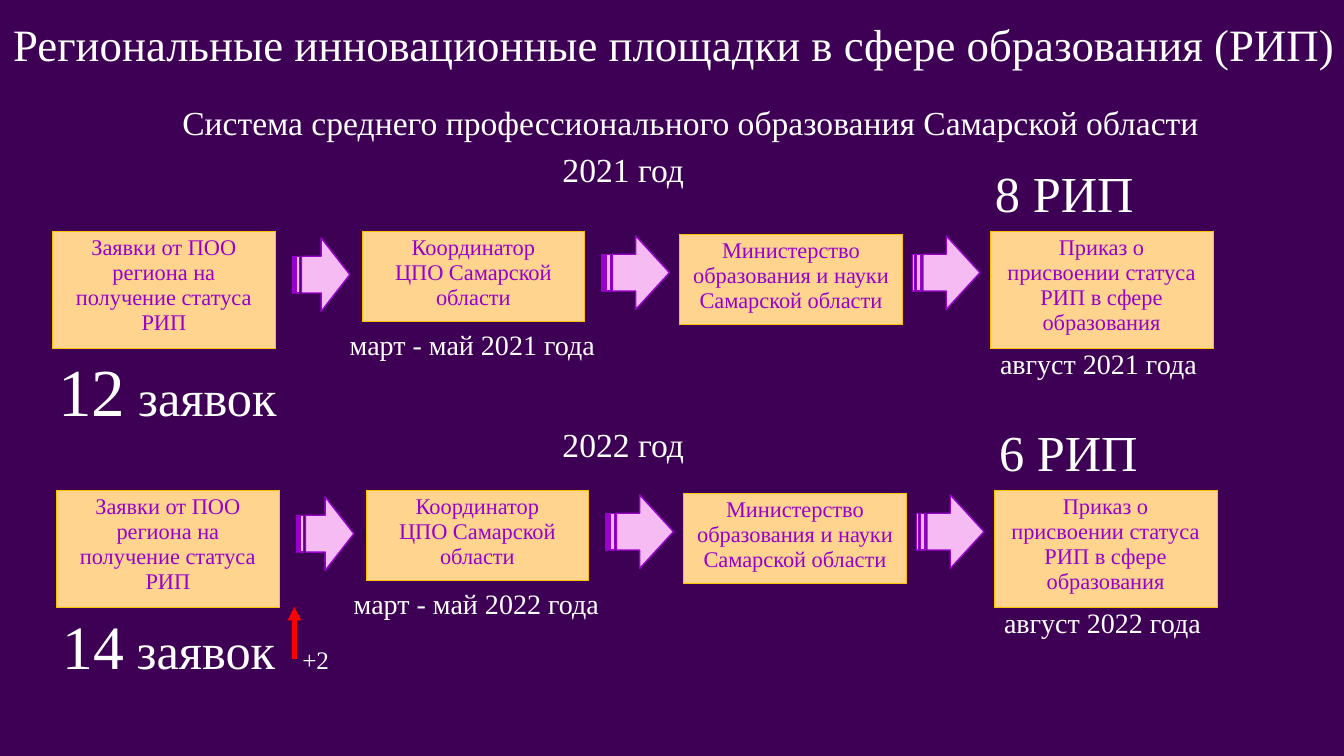
from dataclasses import dataclass

from lxml import etree
from pptx import Presentation
from pptx.dml import color
from pptx.enum import shapes, text
from pptx.oxml import ns
from pptx.util import Inches, Pt

FONT = "Times New Roman"
WHITE, PURPLE, RED = "FFFFFF", "9900CC", "FF0000"
BACKGROUND, CARD, CARD_BORDER, ARROW = "3E0054", "FFD48F", "FFC000", "F7BBF3"


@dataclass
class Card:
    left: float
    top: float
    height: float
    lines: tuple[str, ...]


@dataclass
class Arrow:
    left: float
    top: float
    width: float


@dataclass
class Label:
    left: float
    top: float
    width: float
    height: float
    size: float
    wording: str


@dataclass
class Year:
    year: int
    shift_x: float
    shift_y: float
    year_top: float
    applications: str
    applications_size: float
    applications_top: float
    applications_height: float
    result: str


CARDS = [
    Card(0.52, 2.29, 1.17, ("Заявки от ПОО региона на получение статуса РИП",)),
    Card(3.59, 2.29, 0.9, ("Координатор", "ЦПО Самарской области")),
    Card(6.74, 2.32, 0.9, ("Министерство образования и науки Самарской области",)),
    Card(9.82, 2.29, 1.17, ("Приказ о присвоении статуса РИП в сфере образования",)),
]
ARROWS = [Arrow(2.9, 2.36, 0.57), Arrow(5.97, 2.34, 0.67), Arrow(9.05, 2.34, 0.67)]
YEARS = [
    Year(2021, 0, 0, 1.43, "12", 48, 3.42, 0.91, "8 РИП"),
    Year(2022, 0.04, 2.57, 4.16, "14", 44, 5.98, 0.84, "6 РИП"),
]


def rgb(value: str) -> color.RGBColor:
    return color.RGBColor.from_string(value)


def format_paragraph(paragraph, size: float, colour: str, alignment=text.PP_ALIGN.LEFT) -> None:
    paragraph.alignment = alignment
    paragraph.font.name = FONT
    paragraph.font.size = Pt(size)
    paragraph.font.color.rgb = rgb(colour)


def add_label(slide, label: Label):
    box = slide.shapes.add_textbox(
        Inches(label.left), Inches(label.top), Inches(label.width), Inches(label.height)
    )
    frame = box.text_frame
    frame.word_wrap = False
    frame.auto_size = text.MSO_AUTO_SIZE.SHAPE_TO_FIT_TEXT
    paragraph = frame.paragraphs[0]
    paragraph.text = label.wording
    format_paragraph(paragraph, label.size, WHITE)
    return paragraph


def add_cell_borders(cell) -> None:
    properties = cell._tc.get_or_add_tcPr()
    for position, side in enumerate(("lnL", "lnR", "lnT", "lnB")):
        border = etree.Element(ns.qn(f"a:{side}"), w=str(Pt(0.5)))
        fill = etree.SubElement(border, ns.qn("a:solidFill"))
        etree.SubElement(fill, ns.qn("a:srgbClr"), val=CARD_BORDER)
        properties.insert(position, border)


def add_card(slide, card: Card, shift_x: float, shift_y: float) -> None:
    table = slide.shapes.add_table(
        1, 1, Inches(card.left + shift_x), Inches(card.top + shift_y),
        Inches(2.21), Inches(card.height),
    ).table
    table.first_row = False
    table.horz_banding = False
    cell = table.cell(0, 0)
    cell.fill.solid()
    cell.fill.fore_color.rgb = rgb(CARD)
    add_cell_borders(cell)
    cell.text = "\n".join(card.lines)
    for paragraph in cell.text_frame.paragraphs:
        format_paragraph(paragraph, 16, PURPLE, text.PP_ALIGN.CENTER)


def add_arrow(slide, arrow: Arrow, shift_x: float, shift_y: float) -> None:
    shape = slide.shapes.add_shape(
        shapes.MSO_SHAPE.STRIPED_RIGHT_ARROW, Inches(arrow.left + shift_x),
        Inches(arrow.top + shift_y), Inches(arrow.width), Inches(0.73),
    )
    shape.shadow.inherit = False
    shape.fill.solid()
    shape.fill.fore_color.rgb = rgb(ARROW)
    shape.line.color.rgb = rgb(PURPLE)
    shape.line.width = Pt(1)


def add_year(slide, year: Year) -> None:
    for card in CARDS:
        add_card(slide, card, year.shift_x, year.shift_y)
    for arrow in ARROWS:
        add_arrow(slide, arrow, year.shift_x, year.shift_y)
    x, y = year.shift_x, year.shift_y
    for label in (
        Label(5.48, year.year_top, 1.42, 0.5, 24, f"{year.year} год"),
        Label(3.37 + x, 3.2 + y, 2.65, 0.44, 20, f"март - май {year.year} года"),
        Label(9.82 + x, 3.39 + y, 2.17, 0.44, 20, f"август {year.year} года"),
        Label(9.77 + x, 1.56 + y, 1.59, 0.71, 36, year.result),
    ):
        add_label(slide, label)
    paragraph = add_label(slide, Label(
        0.48 + x, year.applications_top, 2.42, year.applications_height, 36, year.applications
    ))
    paragraph.runs[0].font.size = Pt(year.applications_size)
    paragraph.add_run().text = " заявок"


def add_growth_arrow(slide) -> None:
    connector = slide.shapes.add_connector(
        shapes.MSO_CONNECTOR.STRAIGHT, Inches(2.92), Inches(6.54), Inches(2.92), Inches(6.02)
    )
    connector.line.color.rgb = rgb(RED)
    connector.line.width = Pt(3.25)
    etree.SubElement(connector.line._get_or_add_ln(), ns.qn("a:tailEnd"), type="triangle")
    etree.SubElement(connector._element.spPr, ns.qn("a:effectLst"))


def add_title(slide) -> None:
    title = slide.shapes.title
    title.left, title.top = Inches(0.03), Inches(0.12)
    title.width, title.height = Inches(13.44), Inches(0.64)
    frame = title.text_frame
    frame.text = "Региональные инновационные площадки в сфере образования (РИП)"
    frame.word_wrap = False
    frame.auto_size = text.MSO_AUTO_SIZE.SHAPE_TO_FIT_TEXT
    frame.vertical_anchor = text.MSO_ANCHOR.TOP
    format_paragraph(frame.paragraphs[0], 32, WHITE)


def main() -> None:
    presentation = Presentation()
    presentation.slide_width = Inches(13.33)
    presentation.slide_height = Inches(7.5)
    slide = presentation.slides.add_slide(presentation.slide_layouts.get_by_name("Title Only"))
    slide.background.fill.solid()
    slide.background.fill.fore_color.rgb = rgb(BACKGROUND)
    add_title(slide)
    add_label(slide, Label(
        1.71, 0.96, 10.38, 0.5, 24,
        "Система среднего профессионального образования Самарской области",
    ))
    for year in YEARS:
        add_year(slide, year)
    add_growth_arrow(slide)
    add_label(slide, Label(2.9, 6.34, 0.47, 0.4, 18, "+2"))
    presentation.save("out.pptx")


if __name__ == "__main__":
    main()
